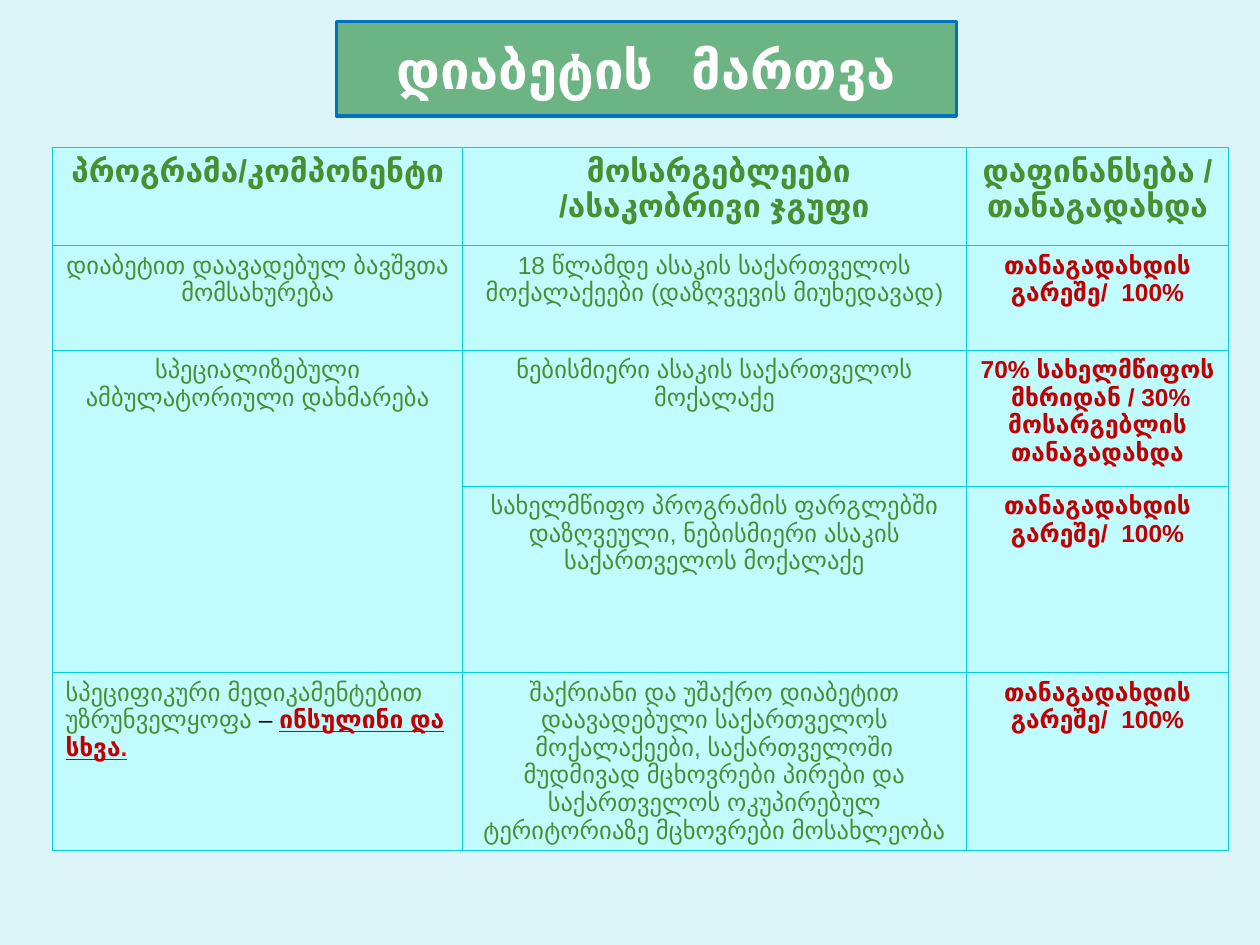
from dataclasses import dataclass

from lxml.etree import SubElement
from pptx import Presentation
from pptx.dml.color import RGBColor
from pptx.enum.text import MSO_ANCHOR, PP_ALIGN
from pptx.oxml.ns import qn
from pptx.util import Inches, Pt


@dataclass(frozen=True)
class Theme:
    """Colours, fonts and sizes of the slide."""
    back: str = "DBF5F9"
    band: str = "6CB484"
    edge: str = "0070C0"
    cell: str = "C0FBFF"
    grid: str = "06D0D9"
    text: str = "488F30"
    note: str = "C00000"
    stop: str = "FF0000"
    dark: str = "000000"
    white: str = "FFFFFF"
    face: str = "Arial"
    title_face: str = "Lato"
    title: int = 30
    head: int = 18
    body: int = 14


THEME = Theme()
COLS = [3.25, 4, 2.08]
ROWS = [0.78, 0.83, 1.08, 1.48, 1.41]
FREE = "თანაგადახდის გარეშე/  100%"
CARE = "სპეციალიზებული ამბულატორიული დახმარება"
CELLS = [
    ["პროგრამა/კომპონენტი", " მოსარგებლეები /ასაკობრივი ჯგუფი",
     "დაფინანსება / თანაგადახდა"],
    ["დიაბეტით დაავადებულ ბავშვთა მომსახურება",
     "18 წლამდე ასაკის საქართველოს მოქალაქეები (დაზღვევის მიუხედავად)", FREE],
    [CARE, "ნებისმიერი ასაკის საქართველოს მოქალაქე",
     "70% სახელმწიფოს  მხრიდან / 30% მოსარგებლის თანაგადახდა"],
    [None, "სახელმწიფო პროგრამის ფარგლებში დაზღვეული, ნებისმიერი ასაკის "
     "საქართველოს მოქალაქე", FREE],
    [None, "შაქრიანი და უშაქრო დიაბეტით დაავადებული საქართველოს მოქალაქეები, "
     "საქართველოში მუდმივად მცხოვრები პირები და საქართველოს ოკუპირებულ "
     "ტერიტორიაზე მცხოვრები მოსახლეობა", FREE],
]
DRUGS = [
    ("სპეციფიკური მედიკამენტებით უზრუნველყოფა ", THEME.text, False),
    ("– ", THEME.dark, False),
    ("ინსულინი და სხვა", THEME.note, True),
    (".", THEME.stop, True),
]


def paint(fill, tone):
    """Fill with one solid colour."""
    fill.solid()
    fill.fore_color.rgb = RGBColor.from_string(tone)


def style(font, size, tone, bold, face=THEME.face):
    """Set the look of a font."""
    font.name, font.size, font.bold = face, Pt(size), bold
    font.color.rgb = RGBColor.from_string(tone)


def frame(cell):
    """Give a cell its four borders and its fill."""
    props = cell._tc.get_or_add_tcPr()
    for side in ("lnL", "lnR", "lnT", "lnB"):
        line = SubElement(props, qn(f"a:{side}"), w=str(Pt(0.75)))
        fill = SubElement(line, qn("a:solidFill"))
        SubElement(fill, qn("a:srgbClr"), val=THEME.grid)
    paint(cell.fill, THEME.cell)


def add_title(slide, text):
    """Place the title in its framed band."""
    shape = slide.shapes.title
    shape.left, shape.top = Inches(2.67), Inches(0.17)
    shape.width, shape.height = Inches(4.92), Inches(0.75)
    paint(shape.fill, THEME.band)
    shape.line.color.rgb = RGBColor.from_string(THEME.edge)
    shape.line.width = Pt(2)
    shape.text_frame.text = text
    shape.text_frame.vertical_anchor = MSO_ANCHOR.MIDDLE
    para = shape.text_frame.paragraphs[0]
    para.alignment = PP_ALIGN.CENTER
    style(para.font, THEME.title, THEME.white, True, THEME.title_face)


def write(cell, text, head, last):
    """Write a centred cell in the look of its row and column."""
    cell.text = text
    para = cell.text_frame.paragraphs[0]
    para.alignment = PP_ALIGN.CENTER
    tone = THEME.note if last and not head else THEME.text
    style(para.font, THEME.head if head else THEME.body, tone, head or last)


def write_mixed(cell, parts):
    """Write a left-aligned cell of runs that differ in look."""
    para = cell.text_frame.paragraphs[0]
    for text, tone, strong in parts:
        run = para.add_run()
        run.text = text
        style(run.font, THEME.body, tone, strong)
        run.font.underline = strong


def add_grid(slide):
    """Build the table of programmes, groups and funding."""
    table = slide.shapes.add_table(
        len(ROWS), len(COLS), Inches(0.42), Inches(1.17),
        Inches(sum(COLS)), Inches(sum(ROWS))).table
    table.first_row = table.horz_banding = False
    for col, width in zip(table.columns, COLS):
        col.width = Inches(width)
    for row, height in zip(table.rows, ROWS):
        row.height = Inches(height)
    for r, line in enumerate(CELLS):
        for c, text in enumerate(line):
            cell = table.cell(r, c)
            frame(cell)
            if text:
                write(cell, text, r == 0, c == len(COLS) - 1)
    table.cell(2, 0).merge(table.cell(3, 0))
    write_mixed(table.cell(4, 0), DRUGS)


def main():
    """Build and save the slide."""
    deck = Presentation()
    deck.slide_width, deck.slide_height = Inches(10), Inches(7.5)
    slide = deck.slides.add_slide(deck.slide_layouts[5])
    paint(slide.background.fill, THEME.back)
    add_title(slide, "დიაბეტის   მართვა")
    add_grid(slide)
    deck.save("out.pptx")


if __name__ == "__main__":
    main()
